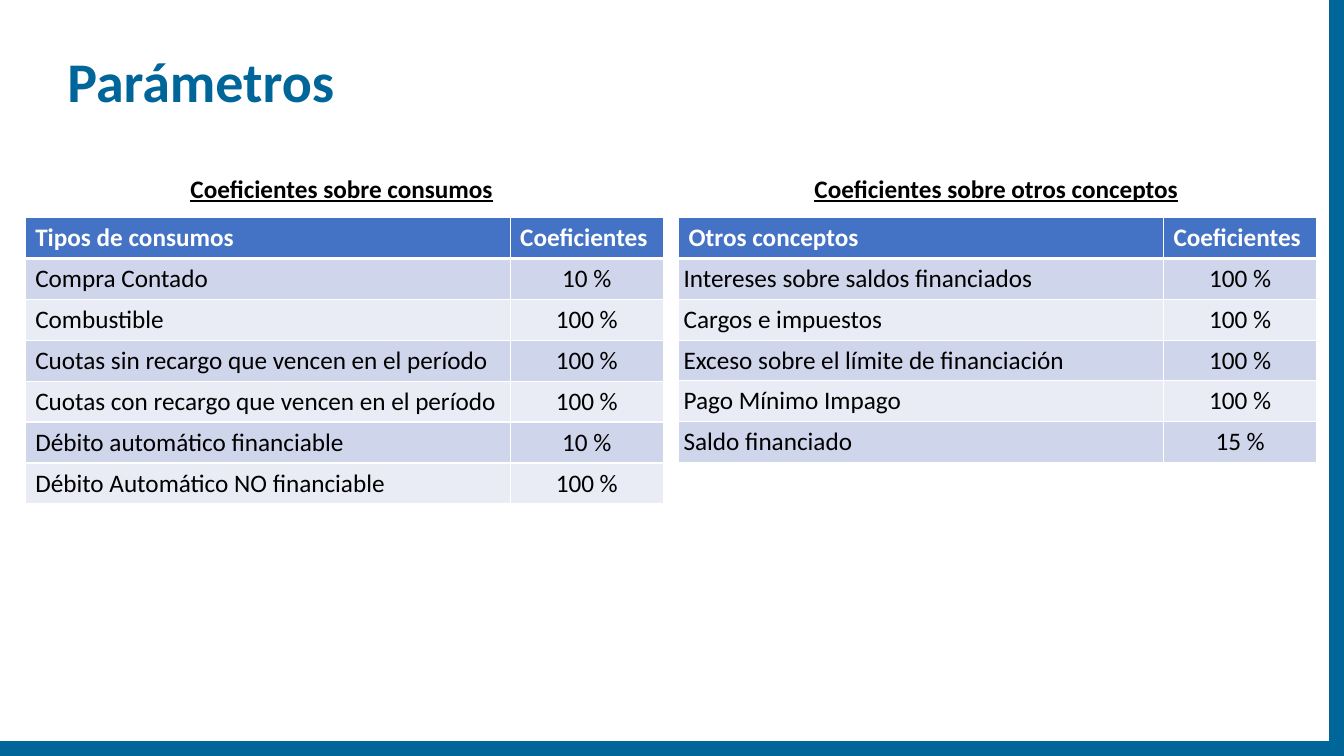
from lxml.etree import SubElement
from pptx import Presentation
from pptx.dml.color import RGBColor
from pptx.enum.shapes import MSO_SHAPE as Shape
from pptx.enum.text import MSO_ANCHOR as Anchor, PP_ALIGN as Align
from pptx.oxml.ns import qn
from pptx.util import Inches, Pt

TEAL, BLUE, WHITE, BLACK = "006699", "4472C4", "FFFFFF", "000000"
BANDS = ["CFD5EA", "E9EBF5"]


def color(value):
    return RGBColor.from_string(value)


def write(frame, text, size, text_color, **formats):
    para = frame.paragraphs[0]
    span = para.add_run()
    span.text = text
    span.font.color.rgb = color(text_color)
    for name, value in {"name": "Calibri", "size": Pt(size), **formats}.items():
        setattr(span.font, name, value)
    return para


deck = Presentation()
deck.slide_width, deck.slide_height = Inches(13.33), Inches(7.5)
page = deck.slides.add_slide(deck.slide_layouts[6])

# Bottom and right edge bars
for left, top, width, height in [(0, 7.36, 13.33, 0.14), (13.19, 0, 0.14, 7.36)]:
    bar = page.shapes.add_shape(
        Shape.RECTANGLE, Inches(left), Inches(top), Inches(width), Inches(height))
    bar.shadow.inherit = False
    bar.fill.solid()
    bar.fill.fore_color.rgb = color(TEAL)
    bar.line.color.rgb = color(TEAL)
    bar.line.width = Pt(1)

# Title
title = page.shapes.add_textbox(Inches(0.57), Inches(0.4), Inches(11.84), Inches(0.87))
title.text_frame.word_wrap = True
title.text_frame.vertical_anchor = Anchor.MIDDLE
write(title.text_frame, "Parámetros", 40, TEAL, bold=True).line_spacing = 0.9

# Tables: left, height, label inset, heading left and width, heading, rows
tables = [
    (0.25, 2.84, 0.1, 1.79, 3.22, "Coeficientes sobre consumos", [
        ("Tipos de consumos", "Coeficientes"),
        ("Compra Contado", "10 %"),
        ("Combustible", "100 %"),
        ("Cuotas sin recargo que vencen en el período", "100 %"),
        ("Cuotas con recargo que vencen en el período", "100 %"),
        ("Débito automático financiable", "10 %"),
        ("Débito Automático NO financiable", "100 %"),
    ]),
    (6.73, 2.43, 0.05, 7.98, 3.83, "Coeficientes sobre otros conceptos", [
        ("Otros conceptos", "Coeficientes"),
        ("Intereses sobre saldos financiados", "100 %"),
        ("Cargos e impuestos", "100 %"),
        ("Exceso sobre el límite de financiación", "100 %"),
        ("Pago Mínimo Impago", "100 %"),
        ("Saldo financiado", "15 %"),
    ]),
]

for left, height, inset, box_left, box_width, heading, rows in tables:
    # Heading above the table
    box = page.shapes.add_textbox(
        Inches(box_left), Inches(1.67), Inches(box_width), Inches(0.4))
    box.text_frame.word_wrap = False
    write(box.text_frame, heading, 18, BLACK, bold=True, underline=True)

    table = page.shapes.add_table(
        len(rows), 2, Inches(left), Inches(2.16), Inches(6.33), Inches(height)).table
    for column, width in zip(table.columns, [4.81, 1.52]):
        column.width = Inches(width)

    for r, row in enumerate(rows):
        header = r == 0
        for c, text in enumerate(row):
            cell = table.cell(r, c)
            cell.vertical_anchor = Anchor.MIDDLE
            para = write(cell.text_frame, text, 18, WHITE if header else BLACK, bold=header)
            if not header:
                margin = Inches(0 if c else inset)
                cell.margin_left = margin
                cell.margin_right = 0
                cell.margin_top = cell.margin_bottom = Inches(0.05 if inset == 0.1 and c == 0 else 0)
                para.alignment = Align.CENTER if c else Align.LEFT

            # White borders, thicker under the header
            edges = {"a:lnL": 1, "a:lnR": 1, "a:lnT": 3 if r == 1 else 1,
                     "a:lnB": 3 if header else 1}
            for edge, points in edges.items():
                line = SubElement(cell._tc.get_or_add_tcPr(), qn(edge), w=str(Pt(points)))
                fill = SubElement(line, qn("a:solidFill"))
                SubElement(fill, qn("a:srgbClr"), val=WHITE)
            cell.fill.solid()
            cell.fill.fore_color.rgb = color(BLUE if header else BANDS[(r - 1) % 2])

deck.save("out.pptx")
